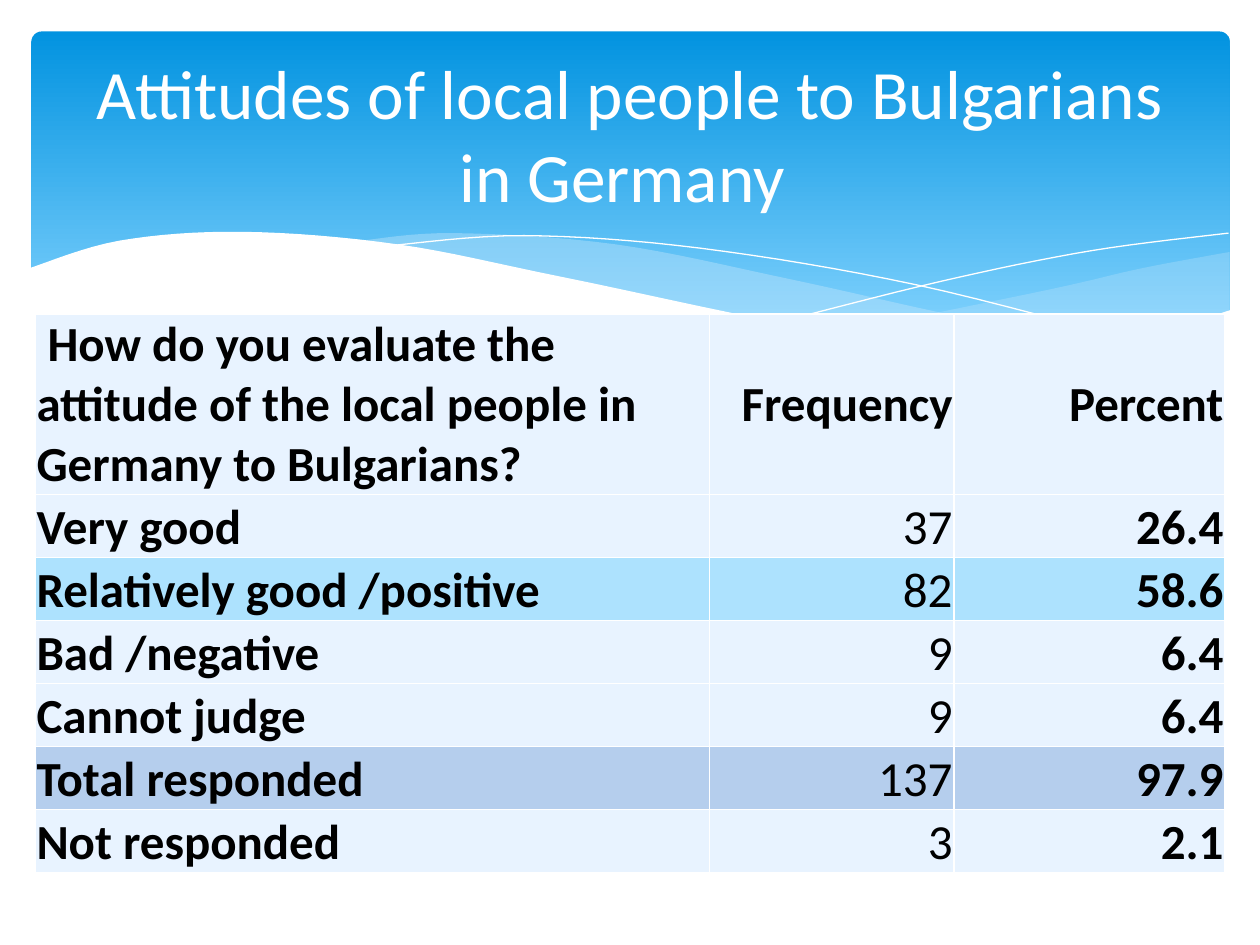
from dataclasses import dataclass
from typing import Optional

from lxml import etree
from pptx import Presentation
from pptx import util as u
from pptx.dml.color import RGBColor
from pptx.enum import shapes, text
from pptx.oxml.ns import qn

FONT = "Calibri"
WHITE, BLACK, PALE, MIST = "FFFFFF", "000000", "E8F3FF", "C6E7FC"
STEPS = 8  # straight pieces between two knots of a curve

Point = tuple[float, float]


@dataclass
class Wave:
    edges: list[list[Point]]  # each edge is a smooth curve through its knots
    fill: Optional[str] = None  # None draws an open white hairline
    alpha: int = 100


@dataclass
class Row:
    label: str
    frequency: str
    percent: str
    fill: str = PALE


WAVES = [
    # Pale wave at the right
    Wave([[(9.76, 2), (9.06, 2.13), (8.32, 2.3), (6.61, 2.65)],
          [(6.61, 2.65), (8.14, 2.78), (8.97, 2.7), (9.76, 2.47)]], MIST, 29),
    # Pale wave in the middle
    Wave([[(8.93, 2.73), (7.75, 2.54), (6.29, 2.22), (4.89, 1.94), (3.61, 1.85), (2.86, 1.91)],
          [(2.86, 1.91), (4.49, 2.22), (6.01, 2.55), (7.22, 2.74), (8.93, 2.73)]], MIST, 40),
    # Hairlines
    Wave([[(3.09, 1.95), (4.16, 1.87), (5.56, 1.97), (7.27, 2.26), (9.07, 2.72)]]),
    Wave([[(6.13, 2.57), (7.48, 2.23), (8.66, 1.99), (9.75, 1.85)]]),
    # White wave that cuts off the banner
    Wave([[(9.77, 2.46), (8.99, 2.69), (8.09, 2.77), (6.68, 2.65), (4.47, 2.2),
           (3.16, 1.94), (1.93, 1.84), (0.95, 1.91), (0.23, 2.13)],
          [(0.23, 3.29), (9.77, 3.29)]], WHITE),
]

QUESTION = " How do you evaluate the attitude of the local people in Germany to Bulgarians?"
ROWS = [
    Row(QUESTION, "Frequency", "Percent"),
    Row("Very good", "37", "26.4"),
    Row("Relatively good /positive", "82", "58.6", "ADE2FE"),
    Row("Bad /negative", "9", "6.4"),
    Row("Cannot judge", "9", "6.4"),
    Row("Total responded", "137", "97.9", "B5CEED"),
    Row("Not responded", "3", "2.1"),
]


def rgb(value: str) -> RGBColor:
    return RGBColor.from_string(value)


def smooth(knots: list[Point]) -> list[Point]:
    """Catmull-Rom curve through the knots."""
    padded = [knots[0], *knots, knots[-1]]
    points = [knots[0]]
    for a, b, c, d in zip(padded, padded[1:], padded[2:], padded[3:]):
        for step in range(1, STEPS + 1):
            t = step / STEPS
            points.append(tuple(
                q + t / 2 * (r - p + t * (2 * p - 5 * q + 4 * r - v
                                          + t * (3 * (q - r) + v - p)))
                for p, q, r, v in zip(a, b, c, d)))
    return points


def add_banner(s) -> None:
    sp = s.shapes.add_shape(shapes.MSO_SHAPE.ROUNDED_RECTANGLE, u.Inches(0.25),
                            u.Inches(0.25), u.Inches(9.51), u.Inches(2.7))
    sp.adjustments[0] = 0.03
    sp.shadow.inherit = False
    sp.line.fill.background()
    sp.fill.gradient()
    sp.fill.gradient_angle = 270
    for stop, position, color in zip(sp.fill.gradient_stops, (0, 0.9), ("0293E0", "83D3FE")):
        stop.position = position
        stop.color.rgb = rgb(color)


def add_wave(s, wave: Wave) -> None:
    points = [(u.Inches(x), u.Inches(y)) for edge in wave.edges for x, y in smooth(edge)]
    builder = s.shapes.build_freeform(*points[0])
    builder.add_line_segments(points[1:], close=wave.fill is not None)
    sp = builder.convert_to_shape()
    sp.shadow.inherit = False
    if wave.fill is None:
        sp.fill.background()
        sp.line.color.rgb = rgb(WHITE)
        sp.line.width = u.Pt(0)
        return
    sp.line.fill.background()
    sp.fill.solid()
    sp.fill.fore_color.rgb = rgb(wave.fill)
    if wave.alpha < 100:
        color = sp._element.spPr.find(f"{qn('a:solidFill')}/{qn('a:srgbClr')}")
        etree.SubElement(color, qn("a:alpha"), val=str(wave.alpha * 1000))


def set_borders(cell, color: str, width: float) -> None:
    tcPr = cell._tc.get_or_add_tcPr()
    for i, side in enumerate(("lnL", "lnR", "lnT", "lnB")):
        ln = etree.Element(qn(f"a:{side}"), w=str(u.Pt(width)))
        fill = etree.SubElement(ln, qn("a:solidFill"))
        etree.SubElement(fill, qn("a:srgbClr"), val=color)
        tcPr.insert(i, ln)


def fill_cell(cell, value: str, fill: str, bold: bool, right: bool, middle: bool) -> None:
    cell.margin_left = cell.margin_right = cell.margin_top = u.Inches(0.01)
    cell.margin_bottom = 0
    cell.vertical_anchor = text.MSO_ANCHOR.MIDDLE if middle else text.MSO_ANCHOR.BOTTOM
    cell.fill.solid()
    cell.fill.fore_color.rgb = rgb(fill)
    set_borders(cell, WHITE, 1)
    cell.text = value
    p = cell.text_frame.paragraphs[0]
    p.alignment = text.PP_ALIGN.RIGHT if right else text.PP_ALIGN.LEFT
    p.font.name, p.font.size, p.font.bold = FONT, u.Pt(28), bold
    p.font.color.rgb = rgb(BLACK)


def add_survey_table(s) -> None:
    frame = s.shapes.add_table(len(ROWS), 3, u.Inches(0.28), u.Inches(2.49),
                               u.Inches(9.44), u.Inches(4.43))
    table = frame.table
    for column, width in zip(table.columns, (5.35, 1.94, 2.15)):
        column.width = u.Inches(width)
    for i, row in enumerate(ROWS):
        header = i == 0
        table.rows[i].height = u.Inches(1.43 if header else 0.5)
        for j, value in enumerate((row.label, row.frequency, row.percent)):
            fill_cell(table.cell(i, j), value, row.fill, bold=header or j != 1,
                      right=j > 0, middle=header and j > 0)


def set_title(s, value: str) -> None:
    sp = s.shapes.title
    sp.left, sp.top, sp.width, sp.height = map(u.Inches, (0.5, 0.37, 9, 1.37))
    s.shapes._spTree.append(sp._element)  # bring in front of the banner
    tf = sp.text_frame
    tf.text = value
    tf.word_wrap = True
    tf.auto_size = text.MSO_AUTO_SIZE.NONE
    tf.vertical_anchor = text.MSO_ANCHOR.MIDDLE
    p = tf.paragraphs[0]
    p.alignment = text.PP_ALIGN.CENTER
    p.font.name, p.font.size = FONT, u.Pt(39.6)
    p.font.color.rgb = rgb(WHITE)


def main() -> None:
    prs = Presentation()
    prs.slide_width, prs.slide_height = u.Inches(10), u.Inches(7.5)
    s = prs.slides.add_slide(prs.slide_layouts[5])

    # Banner with waves
    add_banner(s)
    for wave in WAVES:
        add_wave(s, wave)

    # Title and survey results
    set_title(s, "Attitudes of local people to Bulgarians in Germany ")
    add_survey_table(s)
    prs.save("out.pptx")


if __name__ == "__main__":
    main()
